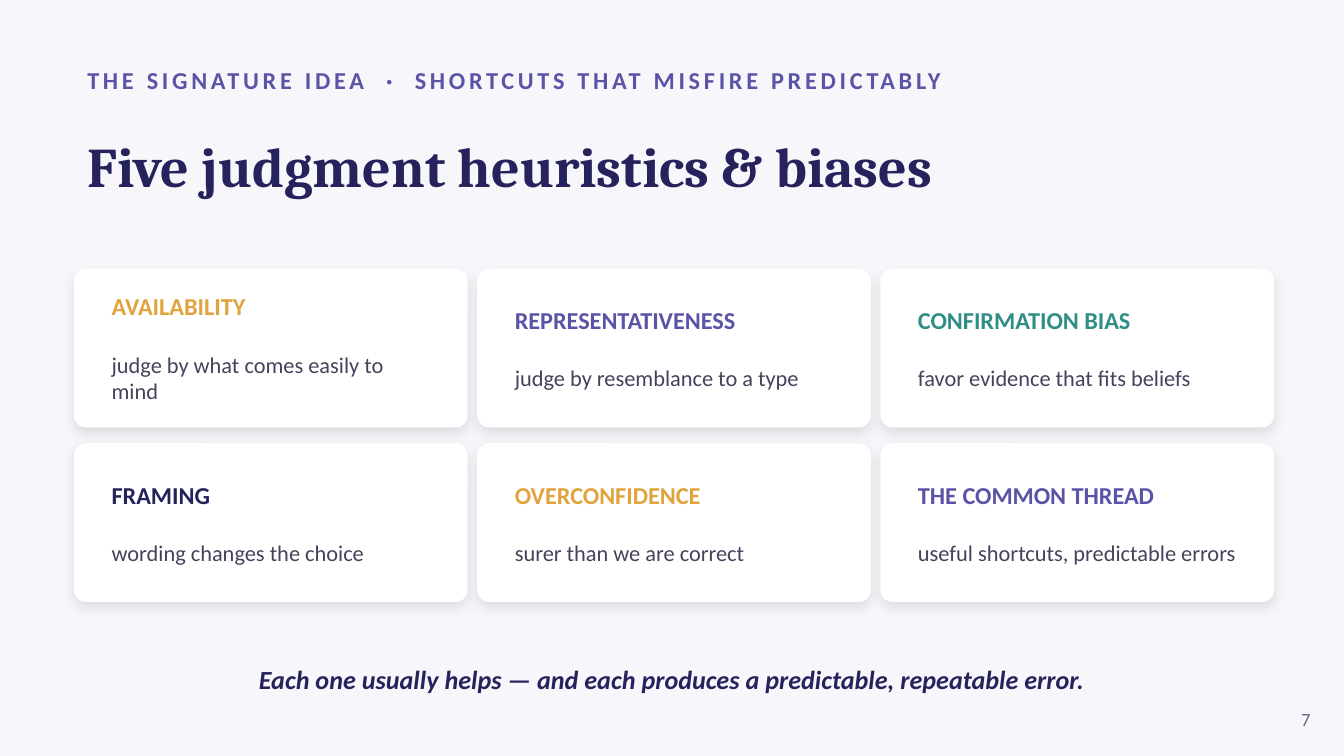
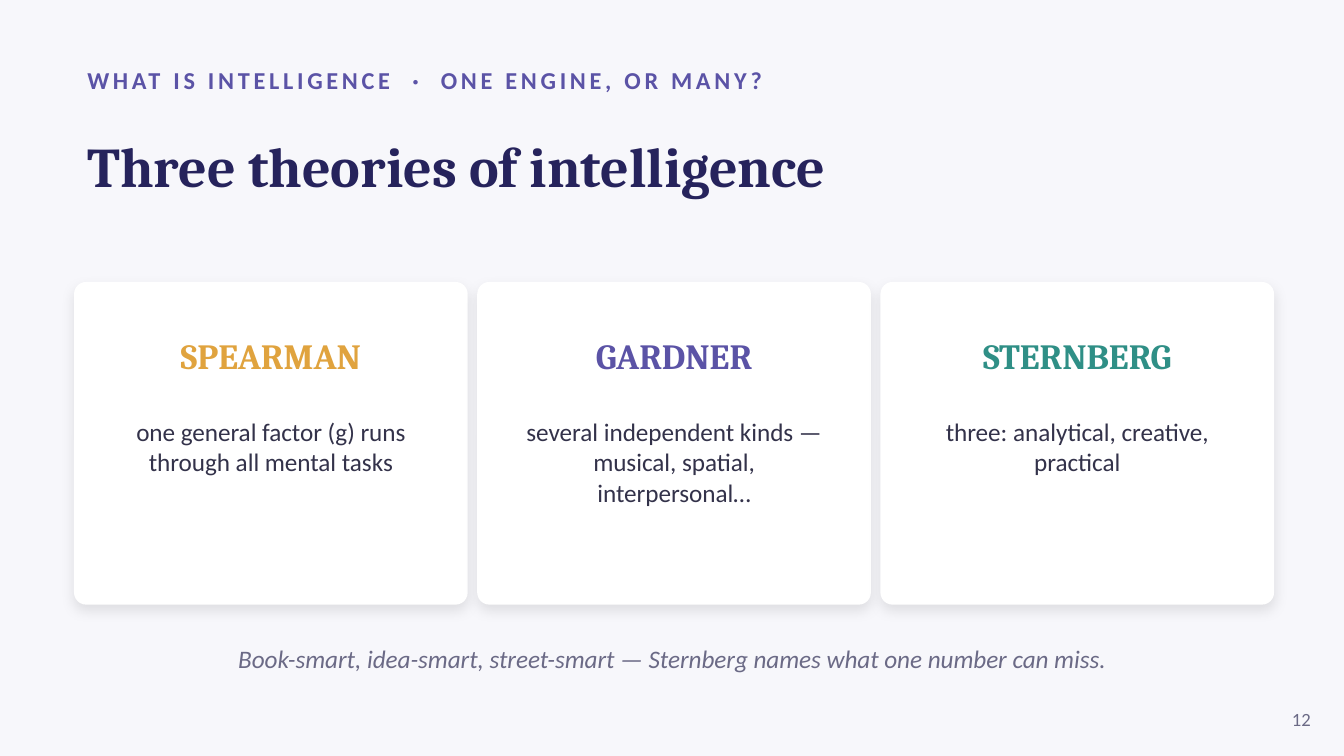
from lxml.etree import SubElement
from pptx import Presentation
from pptx.dml.color import RGBColor
from pptx.enum.shapes import MSO_SHAPE
from pptx.enum.text import MSO_ANCHOR, MSO_AUTO_SIZE, PP_ALIGN
from pptx.oxml.ns import qn
from pptx.util import Cm, Pt

# Palette and fonts
PAPER = RGBColor(0xF7, 0xF7, 0xFB)
WHITE = RGBColor(0xFF, 0xFF, 0xFF)
NAVY = RGBColor(0x26, 0x23, 0x5C)
VIOLET = RGBColor(0x5B, 0x53, 0xA6)
AMBER = RGBColor(0xE0, 0xA3, 0x3E)
TEAL = RGBColor(0x2F, 0x8F, 0x86)
SLATE = RGBColor(0x44, 0x43, 0x5C)
INK = RGBColor(0x33, 0x32, 0x4A)
MUTED = RGBColor(0x6B, 0x6A, 0x86)
SANS, SERIF = "Calibri", "Cambria"

# Content
BIASES = {
    "kicker": ("THE SIGNATURE IDEA", "SHORTCUTS THAT MISFIRE PREDICTABLY"),
    "title": "Five judgment heuristics & biases",
    "cards": [
        ("AVAILABILITY", "judge by what comes easily to mind", AMBER),
        ("REPRESENTATIVENESS", "judge by resemblance to a type", VIOLET),
        ("CONFIRMATION BIAS", "favor evidence that fits beliefs", TEAL),
        ("FRAMING", "wording changes the choice", NAVY),
        ("OVERCONFIDENCE", "surer than we are correct", AMBER),
        ("THE COMMON THREAD", "useful shortcuts, predictable errors", VIOLET),
    ],
    "takeaway": "Each one usually helps — and each produces a predictable, "
                "repeatable error.",
    "number": "7",
}
THEORIES = {
    "kicker": ("WHAT IS INTELLIGENCE", "ONE ENGINE, OR MANY?"),
    "title": "Three theories of intelligence",
    "cards": [
        ("SPEARMAN", "one general factor (g) runs through all mental tasks", AMBER),
        ("GARDNER", "several independent kinds — musical, spatial, "
                    "interpersonal…", VIOLET),
        ("STERNBERG", "three: analytical, creative, practical", TEAL),
    ],
    "takeaway": "Book-smart, idea-smart, street-smart — Sternberg names what "
                "one number can miss.",
    "number": "12",
}

# Grid, in centimetres
LEFT, TEXT_W = 1.4, 22.61
COLS, COL_STEP, ROW_STEP = 3, 7.62, 3.3
CARD_W, CORNER = 7.44, 0.23


def style(p, size, color, font=SANS, bold=False, italic=False, align=PP_ALIGN.LEFT):
    p.alignment = align
    f = p.font
    f.name, f.size, f.bold, f.italic = font, Pt(size), bold, italic
    f.color.rgb = color


def add_text(s, x, y, w, h, lines, anchor=MSO_ANCHOR.MIDDLE, gap=0):
    """Text box; each line is (text, style options)."""
    tf = s.shapes.add_textbox(Cm(x), Cm(y), Cm(w), Cm(h)).text_frame
    tf.word_wrap, tf.vertical_anchor = True, anchor
    for i, (text, options) in enumerate(lines):
        p = tf.add_paragraph() if i else tf.paragraphs[0]
        if i:
            p.space_before = Pt(gap)
        p.text = text
        style(p, **options)
    return tf


def add_card(s, x, y, h):
    sp = s.shapes.add_shape(MSO_SHAPE.ROUNDED_RECTANGLE, Cm(x), Cm(y), Cm(CARD_W), Cm(h))
    sp.adjustments[0] = CORNER / h
    sp.fill.solid()
    sp.fill.fore_color.rgb = WHITE
    sp.line.fill.background()
    # Soft shadow below the card
    sp.shadow.inherit = False
    effects = sp._element.spPr.find(qn("a:effectLst"))
    shadow = SubElement(effects, qn("a:outerShdw"), blurRad=str(Pt(7)), dist=str(Pt(3)),
                        dir="5400000", algn="bl", rotWithShape="0")
    black = SubElement(shadow, qn("a:srgbClr"), val="000000")
    SubElement(black, qn("a:alpha"), val="10000")


def add_kicker(s, topic, hook):
    p = add_text(s, LEFT, 1.07, 22.86, 0.89,
                 [("", dict(size=13, color=VIOLET, bold=True))]).paragraphs[0]
    # Letter spacing is wider around the dot
    for text, spacing in ((topic, 200), (" ·", 690), (" " + hook, 200)):
        r = p.add_run()
        r.text = text
        r._r.get_or_add_rPr().set("spc", str(spacing))


def add_frame(prs, content):
    """Slide with kicker, title and page number."""
    s = prs.slides.add_slide(prs.slide_layouts[5])
    add_kicker(s, *content["kicker"])
    title = s.shapes.title
    title.left, title.top, title.width, title.height = Cm(LEFT), Cm(1.98), Cm(TEXT_W), Cm(2.29)
    tf = title.text_frame
    tf.text = content["title"]
    tf.vertical_anchor, tf.auto_size = MSO_ANCHOR.MIDDLE, MSO_AUTO_SIZE.NONE
    style(tf.paragraphs[0], 30, NAVY, SERIF, bold=True)
    add_text(s, 23.75, 13.21, 1.27, 0.76,
             [(content["number"], dict(size=10, color=MUTED, align=PP_ALIGN.RIGHT))])
    return s


def add_takeaway(s, y, text, **options):
    add_text(s, LEFT, y, TEXT_W, 1.02,
             [(text, dict(italic=True, align=PP_ALIGN.CENTER, **options))])


def build_biases(prs):
    s = add_frame(prs, BIASES)
    card_h, pad_x, pad_y = 3, 0.46, 0.3
    for i, (name, meaning, color) in enumerate(BIASES["cards"]):
        row, col = divmod(i, COLS)
        x, y = LEFT + col * COL_STEP, 5.08 + row * ROW_STEP
        add_card(s, x, y, card_h)
        add_text(s, x + pad_x, y + pad_y, CARD_W - 2 * pad_x, card_h - 2 * pad_y,
                 [(name, dict(size=13, color=color, bold=True)),
                  (meaning, dict(size=12, color=SLATE))], gap=16)
    add_takeaway(s, 12.32, BIASES["takeaway"], size=14, color=NAVY, bold=True)


def build_theories(prs):
    s = add_frame(prs, THEORIES)
    top, pad = 5.33, 0.51
    for col, (name, claim, color) in enumerate(THEORIES["cards"]):
        x = LEFT + col * COL_STEP
        add_card(s, x, top, 6.1)
        add_text(s, x, top + 0.76, CARD_W, 1.27,
                 [(name, dict(size=19, color=color, font=SERIF, bold=True,
                              align=PP_ALIGN.CENTER))])
        add_text(s, x + pad, top + 2.42, CARD_W - 2 * pad, 3.3,
                 [(claim, dict(size=13.5, color=INK, align=PP_ALIGN.CENTER))],
                 anchor=MSO_ANCHOR.TOP)
    add_takeaway(s, 11.94, THEORIES["takeaway"], size=13.5, color=MUTED)


def main():
    prs = Presentation()
    prs.slide_width, prs.slide_height = Cm(25.4), Cm(14.29)
    fill = prs.slide_master.background.fill
    fill.solid()
    fill.fore_color.rgb = PAPER
    build_biases(prs)
    build_theories(prs)
    prs.save("out.pptx")


if __name__ == "__main__":
    main()
